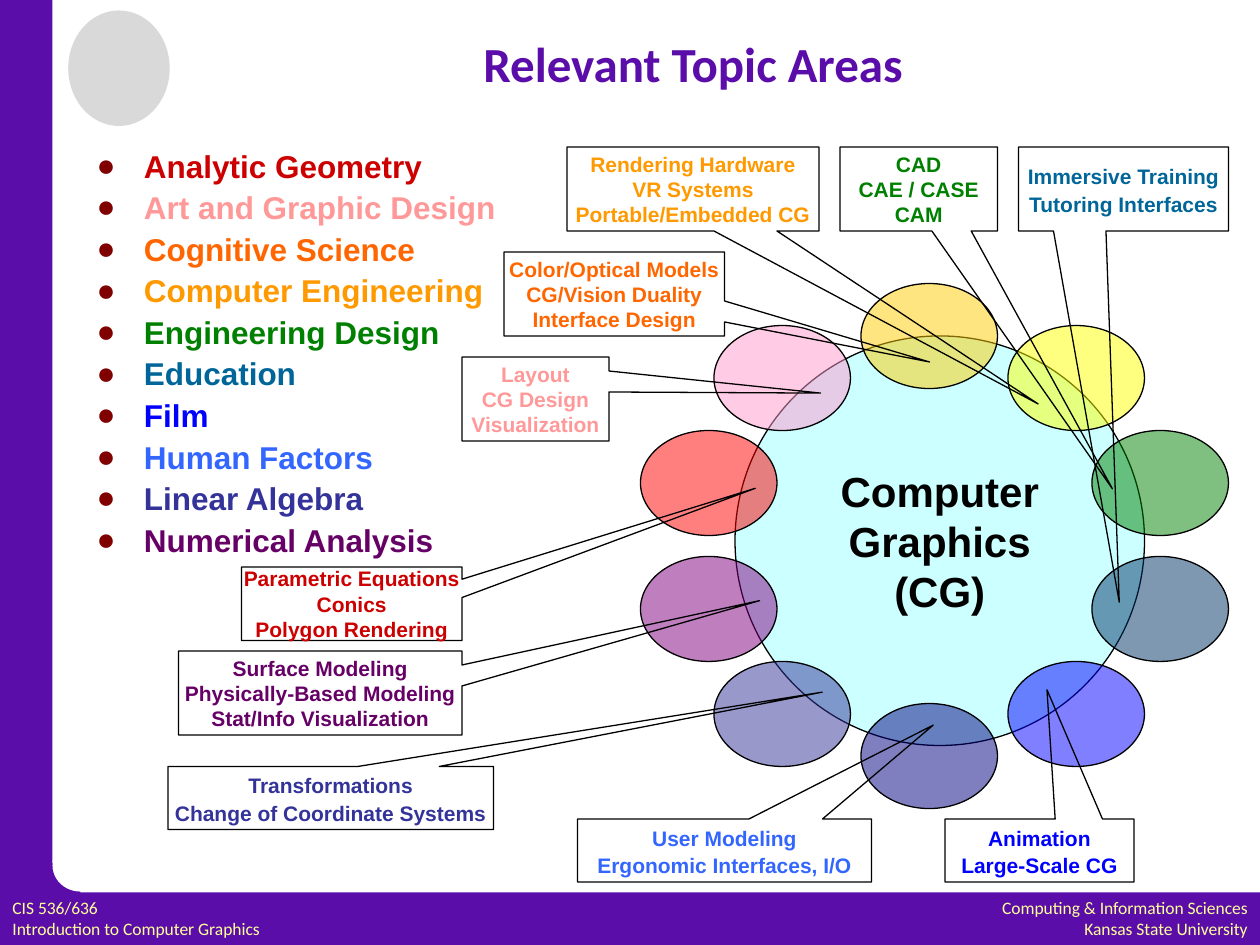
"""Build the slide of topic areas that feed into computer graphics."""
from lxml.etree import SubElement
from pptx import Presentation
from pptx.dml.color import RGBColor
from pptx.enum.shapes import MSO_SHAPE
from pptx.enum.text import MSO_ANCHOR, MSO_AUTO_SIZE, PP_ALIGN
from pptx.oxml.ns import qn
from pptx.util import Pt

BLACK = RGBColor(0x00, 0x00, 0x00)
WHITE = RGBColor(0xFF, 0xFF, 0xFF)
PURPLE = RGBColor(0x5B, 0x0D, 0xAA)
CREAM = RGBColor(0xFF, 0xFF, 0x99)
CYAN = RGBColor(0xCC, 0xFF, 0xFF)
GREY = RGBColor(0xD9, 0xD9, 0xD9)
CRIMSON = RGBColor(0xCC, 0x00, 0x00)
SALMON = RGBColor(0xFF, 0x99, 0x99)
ORANGE = RGBColor(0xFF, 0x66, 0x00)
AMBER = RGBColor(0xFF, 0x99, 0x00)
GREEN = RGBColor(0x00, 0x80, 0x00)
TEAL = RGBColor(0x00, 0x66, 0x99)
BLUE = RGBColor(0x00, 0x00, 0xFF)
SKY = RGBColor(0x33, 0x66, 0xFF)
INDIGO = RGBColor(0x33, 0x33, 0x99)
PLUM = RGBColor(0x66, 0x00, 0x66)
RED = RGBColor(0xFF, 0x00, 0x00)
PINK = RGBColor(0xFF, 0x99, 0xCC)
YELLOW = RGBColor(0xFF, 0xFF, 0x00)
GOLD = RGBColor(0xFF, 0xCC, 0x00)
VIOLET = RGBColor(0x80, 0x00, 0x80)
NAVY = RGBColor(0x00, 0x00, 0x80)
SLATE = RGBColor(0x00, 0x33, 0x66)


def write(shape, lines, size, colors, font="Arial", bold=True, align=PP_ALIGN.CENTER,
          anchor=MSO_ANCHOR.MIDDLE, wrap=True, spacing=1.0, bullet=None):
    frame = shape.text_frame
    frame.word_wrap = wrap
    frame.auto_size = MSO_AUTO_SIZE.NONE
    frame.vertical_anchor = anchor
    frame.text = "\n".join(lines)
    for para, color in zip(frame.paragraphs, colors):
        if bullet:
            props = para._p.get_or_add_pPr()
            props.set("marL", str(Pt(27)))
            props.set("indent", str(-Pt(27)))
            tint = SubElement(props, qn("a:buClr"))
            SubElement(tint, qn("a:srgbClr"), val="800000")
            SubElement(props, qn("a:buFont"), typeface="Arial")
            SubElement(props, qn("a:buChar"), char=bullet)
        para.alignment = align
        para.line_spacing = spacing
        para.space_before = Pt(0)
        run = para.runs[0].font
        run.name, run.size, run.bold = font, Pt(size), bold
        run.color.rgb = color


def draw(kind, box, fill=None, line=None, alpha=None):
    shape = slide.shapes.add_shape(kind, *map(Pt, box))
    shape.shadow.inherit = False
    if fill is None:
        shape.fill.background()
    else:
        shape.fill.solid()
        shape.fill.fore_color.rgb = fill
    if alpha:
        color = shape._element.spPr.find(qn("a:solidFill"))[0]
        SubElement(color, qn("a:alpha"), val=str(alpha * 1000))
    if line is None:
        shape.line.fill.background()
    else:
        shape.line.color.rgb = line
        shape.line.width = Pt(0.75)
    return shape


deck = Presentation()
deck.slide_width, deck.slide_height = Pt(720), Pt(540)
slide = deck.slides.add_slide(deck.slide_layouts[1])

title, body = slide.placeholders
title.left, title.top, title.width, title.height = map(Pt, (84, 6, 624, 60))
write(title, ["Relevant Topic Areas"], 28, [PURPLE], font="Calibri")

topics = {
    "Analytic Geometry": CRIMSON,
    "Art and Graphic Design": SALMON,
    "Cognitive Science": ORANGE,
    "Computer Engineering": AMBER,
    "Engineering Design": GREEN,
    "Education": TEAL,
    "Film": BLUE,
    "Human Factors": SKY,
    "Linear Algebra": INDIGO,
    "Numerical Analysis": PLUM,
}
body.left, body.top, body.width, body.height = map(Pt, (48, 78, 642, 426))
write(body, topics, 18, topics.values(), align=PP_ALIGN.LEFT,
      anchor=MSO_ANCHOR.TOP, spacing=1.1, bullet="●")

draw(MSO_SHAPE.RECTANGLE, (0, 510, 720, 30), PURPLE)
draw(MSO_SHAPE.RECTANGLE, (0, 0, 30, 540), PURPLE)
draw(MSO_SHAPE.RECTANGLE, (14, 493, 32, 32), PURPLE)
draw(MSO_SHAPE.OVAL, (30, 479.5, 32, 30), WHITE)
draw(MSO_SHAPE.OVAL, (39, 6, 58, 66), GREY)

footers = [
    (517, 203, PP_ALIGN.RIGHT, ["Computing & Information Sciences", "Kansas State University"]),
    (0, 212, PP_ALIGN.LEFT, ["CIS 536/636", "Introduction to Computer Graphics"]),
]
for left, width, align, lines in footers:
    note = slide.shapes.add_textbox(Pt(left), Pt(509), Pt(width), Pt(31))
    write(note, lines, 10, [CREAM] * 2, font="Calibri", bold=False,
          align=align, anchor=MSO_ANCHOR.TOP)

hub = draw(MSO_SHAPE.OVAL, (420, 192, 234, 234), CYAN, BLACK)
write(hub, ["Computer", "Graphics", "(CG)"], 24, [BLACK] * 3, wrap=False)

columns = [366, 408, 492, 576, 624]
rings = [
    ([318, 378, 402, 378, 318], [VIOLET, INDIGO, NAVY, BLUE, SLATE]),
    ([246, 186, 162, 186, 246], [RED, PINK, GOLD, YELLOW, GREEN]),
]
for tops, fills in rings:
    for left, top, fill in zip(columns, tops, fills):
        draw(MSO_SHAPE.OVAL, (left, top, 78, 60), fill, BLACK, alpha=50)

calls = [
    (CRIMSON, (138, 324, 126, 42), (1.83, -1.57),
     ["Parametric Equations", "Conics", "Polygon Rendering"]),
    (SALMON, (264, 204, 84, 48), (1.94, -0.07), ["Layout", "CG Design", "Visualization"]),
    (AMBER, (324, 84, 144, 48), (1.37, 2.56),
     ["Rendering Hardware", "VR Systems", "Portable/Embedded CG"]),
    (ORANGE, (288, 144, 126, 48), (1.43, 0.81),
     ["Color/Optical Models", "CG/Vision Duality", "Interface Design"]),
    (GREEN, (480, 84, 90, 48), (1.23, 3.57), ["CAD", "CAE / CASE", "CAM"]),
    (TEAL, (582, 84, 120, 48), (-0.02, 4.92), ["Immersive Training", "Tutoring Interfaces"]),
    (BLUE, (540, 468, 108, 36), (0.04, -2.55), ["Animation", "Large-Scale CG"]),
    (SKY, (330, 468, 168, 36), (0.71, -1.99), ["User Modeling", "Ergonomic Interfaces, I/O"]),
    (INDIGO, (96, 438, 186, 36), (1.51, -1.68),
     ["Transformations", "Change of Coordinate Systems"]),
    (PLUM, (102, 372, 162, 48), (1.55, -1.1),
     ["Surface Modeling", "Physically-Based Modeling", "Stat/Info Visualization"]),
]
for color, box, tip, lines in calls:
    call = draw(MSO_SHAPE.RECTANGULAR_CALLOUT, box, line=BLACK)
    call.adjustments[0], call.adjustments[1] = tip
    write(call, lines, 12, [color] * len(lines), wrap=False,
          spacing=1.1 if len(lines) == 2 else 1.0)

deck.save("out.pptx")
